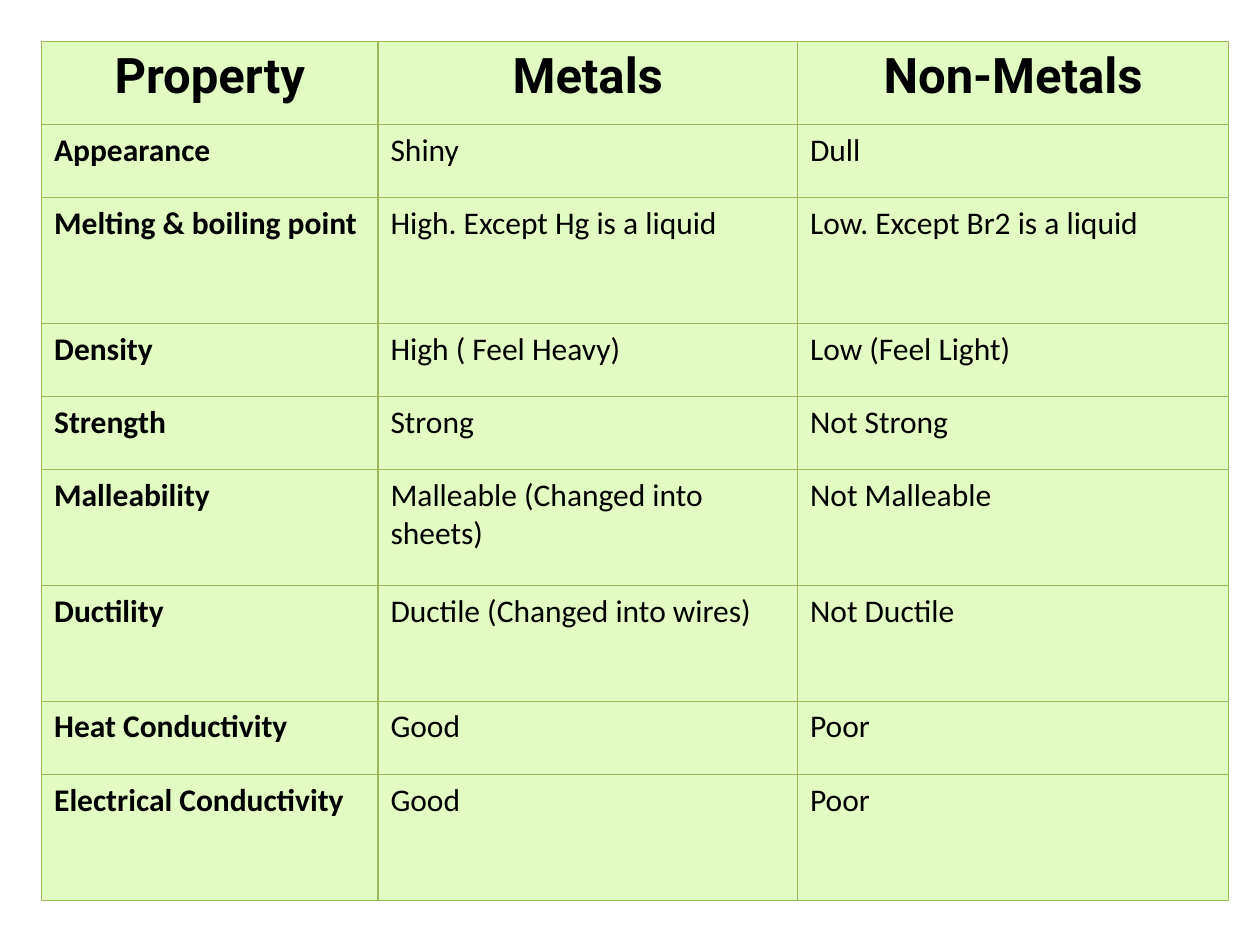
from lxml import etree
from pptx import Presentation
from pptx.dml.color import RGBColor
from pptx.enum.text import PP_ALIGN
from pptx.oxml.ns import qn
from pptx.util import Inches, Pt

CENTER, LEFT = PP_ALIGN.CENTER, PP_ALIGN.LEFT
BLACK = RGBColor(0x00, 0x00, 0x00)
LIME = RGBColor(0xE2, 0xFB, 0xC2)
OLIVE = RGBColor(0x98, 0xB9, 0x55)

WIDTHS = [2.67, 3.33, 3.42]
# Row height, then the text of its three cells
ROWS = [
    (0.66, "Property", "Metals", "Non-Metals"),
    (0.58, "Appearance", "Shiny", "Dull"),
    (1.00, "Melting & boiling point", "High. Except Hg is a liquid",
     "Low. Except Br2 is a liquid"),
    (0.58, "Density", "High ( Feel Heavy)", "Low (Feel Light)"),
    (0.58, "Strength", "Strong", "Not Strong"),
    (0.92, "Malleability", "Malleable (Changed into sheets)",
     "Not Malleable"),
    (0.92, "Ductility", "Ductile (Changed into wires)", "Not Ductile"),
    (0.58, "Heat Conductivity", "Good", "Poor"),
    (1.00, "Electrical Conductivity", "Good", "Poor"),
]


def add_edges(cell, color, width):
    """Draw a line on all four sides of a cell."""
    props = cell._tc.get_or_add_tcPr()
    for side in ("a:lnL", "a:lnR", "a:lnT", "a:lnB"):
        line = etree.SubElement(props, qn(side), w=str(Pt(width)))
        fill = etree.SubElement(line, qn("a:solidFill"))
        etree.SubElement(fill, qn("a:srgbClr"), val=str(color))


def add_text(cell, text, font, size, bold, align):
    para = cell.text_frame.paragraphs[0]
    para.alignment = align
    run = para.add_run()
    run.text = text
    run.font.name = font
    run.font.size = Pt(size)
    run.font.bold = bold
    run.font.color.rgb = BLACK


def fill_cell(cell, text, head, label):
    # Edges come before the fill in the cell properties
    add_edges(cell, OLIVE, 0.75)
    cell.fill.solid()
    cell.fill.fore_color.rgb = LIME
    if head:
        add_text(cell, text, "Roboto", 28, True, CENTER)
    else:
        add_text(cell, text, "Calibri", 18, label, LEFT)


def add_grid(slide):
    high = sum(row[0] for row in ROWS)
    frame = slide.shapes.add_table(
        len(ROWS), len(WIDTHS), Inches(0.33), Inches(0.33),
        Inches(sum(WIDTHS)), Inches(high))
    table = frame.table
    table.horz_banding = False
    for col, width in zip(table.columns, WIDTHS):
        col.width = Inches(width)
    for r, (height, *texts) in enumerate(ROWS):
        table.rows[r].height = Inches(height)
        for c, text in enumerate(texts):
            fill_cell(table.cell(r, c), text, head=r == 0, label=c == 0)


def main():
    deck = Presentation()
    deck.slide_width, deck.slide_height = Inches(10), Inches(7.5)
    # The slide has no title, so it uses the blank layout
    slide = deck.slides.add_slide(deck.slide_layouts[6])
    add_grid(slide)
    deck.save("out.pptx")


if __name__ == "__main__":
    main()
